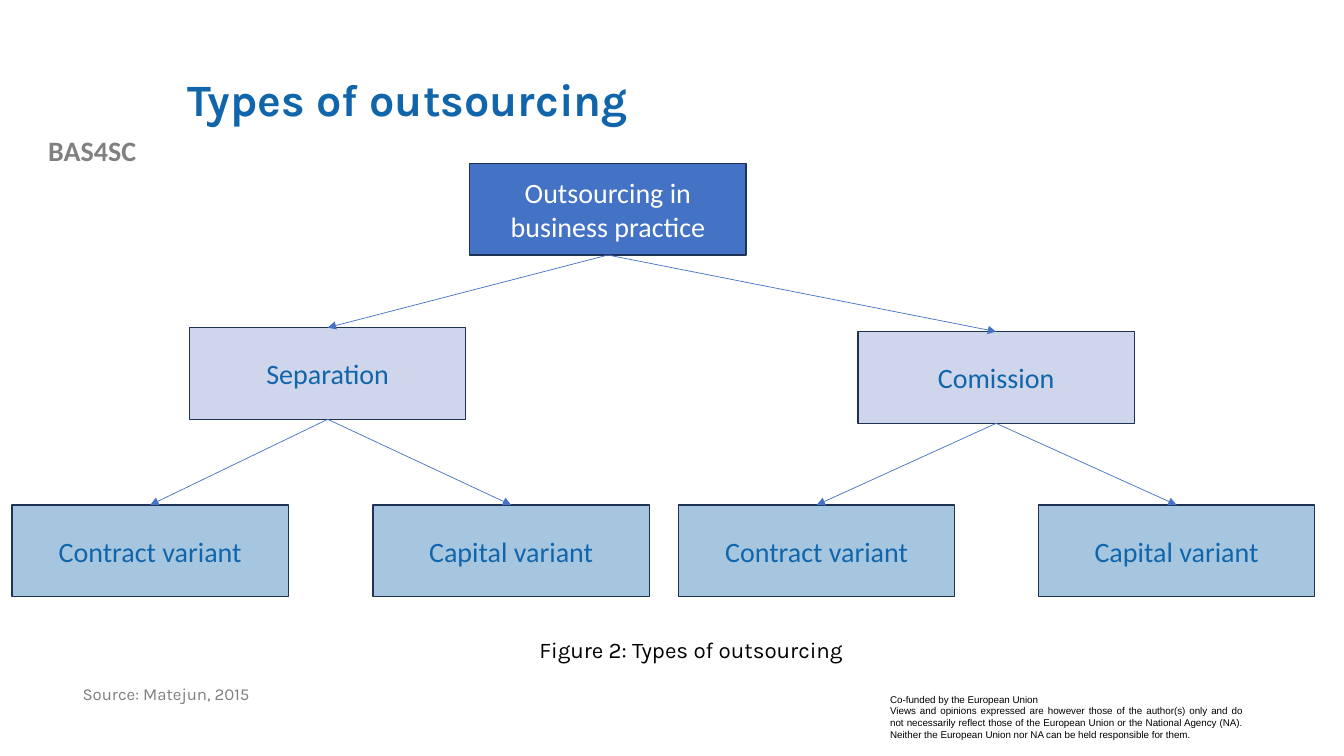
from lxml import etree
from pptx import Presentation
from pptx import util as u
from pptx.dml.color import RGBColor
from pptx.enum import shapes, text
from pptx.oxml.ns import qn

PX = 9144  # 100 px to the inch
BLUE = RGBColor(0x10, 0x65, 0xAB)
ROOT_BLUE = RGBColor(0x44, 0x72, 0xC4)
LAVENDER = RGBColor(0xCF, 0xD5, 0xEA)
LIGHT_BLUE = RGBColor(0xA6, 0xC6, 0xE0)
NAVY = RGBColor(0x1E, 0x32, 0x56)
GREY = RGBColor(0x80, 0x80, 0x80)
SOURCE_GREY = RGBColor(0x7F, 0x7F, 0x7F)
WHITE = RGBColor(0xFF, 0xFF, 0xFF)
BLACK = RGBColor(0, 0, 0)

LEFT, CENTER, JUSTIFY = text.PP_ALIGN.LEFT, text.PP_ALIGN.CENTER, text.PP_ALIGN.JUSTIFY
TOP, MIDDLE = text.MSO_ANCHOR.TOP, text.MSO_ANCHOR.MIDDLE
BOX_WIDTH, BOX_HEIGHT = 274, 91

presentation = Presentation()
presentation.slide_width = 1333 * PX
presentation.slide_height = 750 * PX
slide = presentation.slides.add_slide(presentation.slide_layouts[5])


def write(shape, lines, align, anchor, spacing=1.0, **font):
    frame = shape.text_frame
    frame.text = "\n".join(lines)
    frame.word_wrap = True
    frame.auto_size = text.MSO_AUTO_SIZE.NONE
    frame.vertical_anchor = anchor
    for paragraph in frame.paragraphs:
        paragraph.alignment = align
        paragraph.line_spacing = spacing
        paragraph.font.color.rgb = font["color"]
        for name in ("name", "size", "bold"):
            setattr(paragraph.font, name, font.get(name))


def add_box(label, center, top, fill, color):
    box = slide.shapes.add_shape(
        shapes.MSO_SHAPE.RECTANGLE,
        *(v * PX for v in (center - BOX_WIDTH // 2, top, BOX_WIDTH, BOX_HEIGHT)))
    box.shadow.inherit = False
    box.fill.solid()
    box.fill.fore_color.rgb = fill
    box.line.color.rgb = NAVY
    box.line.width = u.Pt(1)
    write(box, [label], CENTER, MIDDLE, name="Calibri", size=u.Pt(20), color=color)
    return box


# Title
title = slide.shapes.title
title.left, title.top, title.width, title.height = (v * PX for v in (176, 40, 1066, 122))
write(title, ["Types of outsourcing"], LEFT, MIDDLE, 0.9,
      name="Karla", size=u.Pt(32), bold=True, color=BLUE)

# Project name, source, caption and funding note
funding_note = [
    "Co-funded by the European Union",
    "Views and opinions expressed are however those of the author(s) only and do not "
    "necessarily reflect those of the European Union or the National Agency (NA). "
    "Neither the European Union nor NA can be held responsible for them.",
]
notes = [
    (["BAS4SC"], (0, 128, 183, 44), CENTER, 1.0,
     dict(name="Calibri", size=u.Pt(20), bold=True, color=GREY)),
    (funding_note, (873, 683, 369, 57), JUSTIFY, 1.0,
     dict(name="Arial", size=u.Pt(7), color=BLACK)),
    (["Source: Matejun, 2015"], (72, 676, 501, 52), LEFT, 0.9,
     dict(name="Karla", size=u.Pt(12), color=SOURCE_GREY)),
    (["Figure 2: Types of outsourcing"], (466, 626, 439, 37), CENTER, 1.0,
     dict(name="Karla", size=u.Pt(16), color=BLACK)),
]
for lines, place, align, spacing, font in notes:
    note = slide.shapes.add_textbox(*(v * PX for v in place))
    write(note, lines, align, TOP, spacing, **font)

# Tree boxes
root = add_box("Outsourcing in business practice", 603, 162, ROOT_BLUE, WHITE)
links = []
for label, center, top, variant_centers in (
        ("Separation", 325, 325, (149, 507)),
        ("Comission", 988, 329, (810, 1167))):
    branch = add_box(label, center, top, LAVENDER, BLUE)
    links.append((root, branch))
    for variant, variant_center in zip(("Contract variant", "Capital variant"), variant_centers):
        leaf = add_box(variant, variant_center, 501, LIGHT_BLUE, BLUE)
        links.append((branch, leaf))

# Arrows from the bottom of each parent to the top of its child
for parent, child in links:
    arrow = slide.shapes.add_connector(shapes.MSO_CONNECTOR.STRAIGHT, 0, 0, 0, 0)
    arrow.begin_connect(parent, 2)
    arrow.end_connect(child, 0)
    arrow.line.color.rgb = ROOT_BLUE
    arrow.line.width = u.Pt(0.5)
    etree.SubElement(arrow.line._get_or_add_ln(), qn("a:tailEnd"), type="triangle")
    etree.SubElement(arrow._element.spPr, qn("a:effectLst"))

presentation.save("out.pptx")
